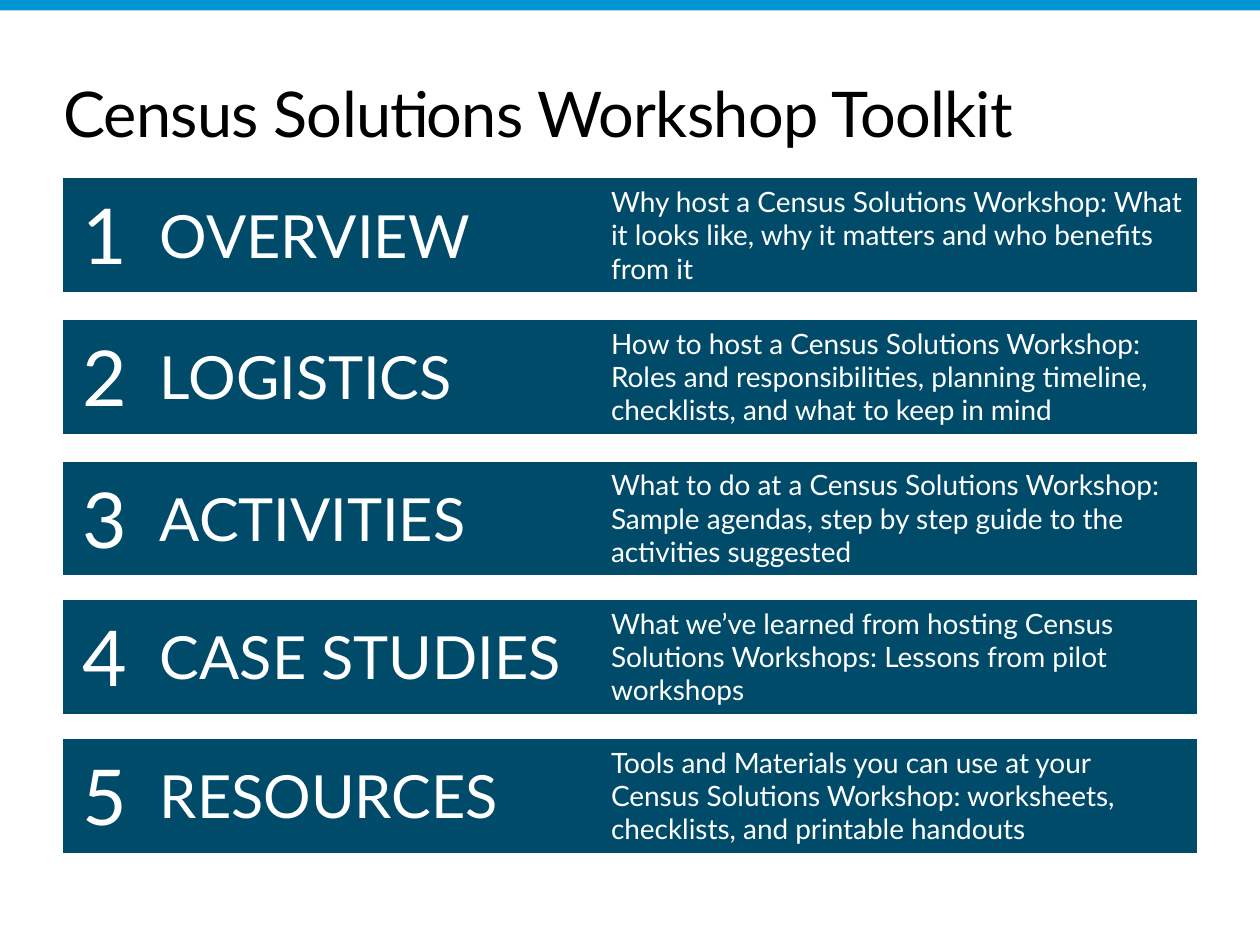
from dataclasses import dataclass

from pptx import Presentation
from pptx.dml.color import RGBColor
from pptx.enum.shapes import MSO_SHAPE
from pptx.enum.text import MSO_ANCHOR, MSO_AUTO_SIZE, PP_ALIGN
from pptx.util import Pt

RECT = MSO_SHAPE.RECTANGLE
TOP, MIDDLE = MSO_ANCHOR.TOP, MSO_ANCHOR.MIDDLE
LEFT, CENTER = PP_ALIGN.LEFT, PP_ALIGN.CENTER
FIXED = MSO_AUTO_SIZE.NONE
PLAIN = "{2D5ABB26-0587-4C30-8999-92F81FD0307C}"

WIDTH, HEIGHT = 720, 540
EDGE, SPAN = 36, 648
ROW = 64.8
COLS = (48.2, 257.8, 342)

PARTS = (
    (102, "OVERVIEW", "Why host a Census Solutions Workshop: What it looks like, "
     "why it matters and who benefits from it"),
    (183, "LOGISTICS", "How to host a Census Solutions Workshop: Roles and "
     "responsibilities, planning timeline, checklists, and what to keep in mind"),
    (264, "ACTIVITIES", "What to do at a Census Solutions Workshop: Sample agendas, "
     "step by step guide to the activities suggested"),
    (343, "CASE STUDIES", "What we’ve learned from hosting Census Solutions "
     "Workshops: Lessons from pilot workshops"),
    (422.4, "RESOURCES", "Tools and Materials you can use at your Census Solutions "
     "Workshop: worksheets, checklists, and printable handouts"),
)


@dataclass(frozen=True)
class Theme:
    face: str = "Lato"
    bar: RGBColor = RGBColor(0x00, 0x96, 0xD2)
    band: RGBColor = RGBColor(0x00, 0x4B, 0x69)
    dark: RGBColor = RGBColor(0x00, 0x00, 0x00)
    light: RGBColor = RGBColor(0xFF, 0xFF, 0xFF)
    title: int = 36
    digit: int = 44
    name: int = 34
    note: int = 16


def apply(item, form):
    for key, value in form.items():
        setattr(item, key, value)


class Page:
    def __init__(self, deck, theme):
        self.theme = theme
        self.slide = deck.slides.add_slide(deck.slide_layouts[5])

    def label(self, frame, text, size, color, align=LEFT):
        para = frame.paragraphs[0]
        para.alignment = align
        run = para.add_run()
        run.text = text
        apply(run.font, {"name": self.theme.face, "size": Pt(size)})
        run.font.color.rgb = color
        return run

    def bar(self, x, y, width, height):
        shape = self.slide.shapes.add_shape(RECT, Pt(x), Pt(y), Pt(width), Pt(height))
        shape.shadow.inherit = False
        shape.fill.solid()
        shape.fill.fore_color.rgb = self.theme.bar
        shape.line.fill.background()

    def title(self, text, x, y, width, height):
        holder = self.slide.shapes.title
        apply(holder, {"left": Pt(x), "top": Pt(y),
                       "width": Pt(width), "height": Pt(height)})
        frame = holder.text_frame
        apply(frame, {"margin_left": 0, "margin_top": 0, "margin_right": 0,
                      "margin_bottom": 0, "word_wrap": True,
                      "auto_size": FIXED, "vertical_anchor": MIDDLE})
        run = self.label(frame, text, self.theme.title, self.theme.dark)
        run._r.get_or_add_rPr().set("spc", "-40")

    def band(self, y, digit, name, note):
        theme = self.theme
        table = self.slide.shapes.add_table(
            1, len(COLS), Pt(EDGE), Pt(y), Pt(SPAN), Pt(ROW)).table
        apply(table, {"first_row": False, "horz_banding": False})
        table._tbl.tblPr[0].text = PLAIN
        cells = (
            (digit, theme.digit, CENTER, MIDDLE),
            (name, theme.name, LEFT, MIDDLE),
            (note, theme.note, LEFT, TOP),
        )
        for col, (text, size, align, anchor) in enumerate(cells):
            table.columns[col].width = Pt(COLS[col])
            cell = table.cell(0, col)
            cell.vertical_anchor = anchor
            cell.fill.solid()
            cell.fill.fore_color.rgb = theme.band
            self.label(cell.text_frame, text, size, theme.light, align)


def main():
    deck = Presentation()
    apply(deck, {"slide_width": Pt(WIDTH), "slide_height": Pt(HEIGHT)})
    page = Page(deck, Theme())
    page.bar(0, 0, WIDTH, 6)
    page.title("Census Solutions Workshop Toolkit", EDGE, 42, SPAN, 44.6)
    for digit, (y, name, note) in enumerate(PARTS, 1):
        page.band(y, str(digit), name, note)
    deck.save("out.pptx")


if __name__ == "__main__":
    main()
